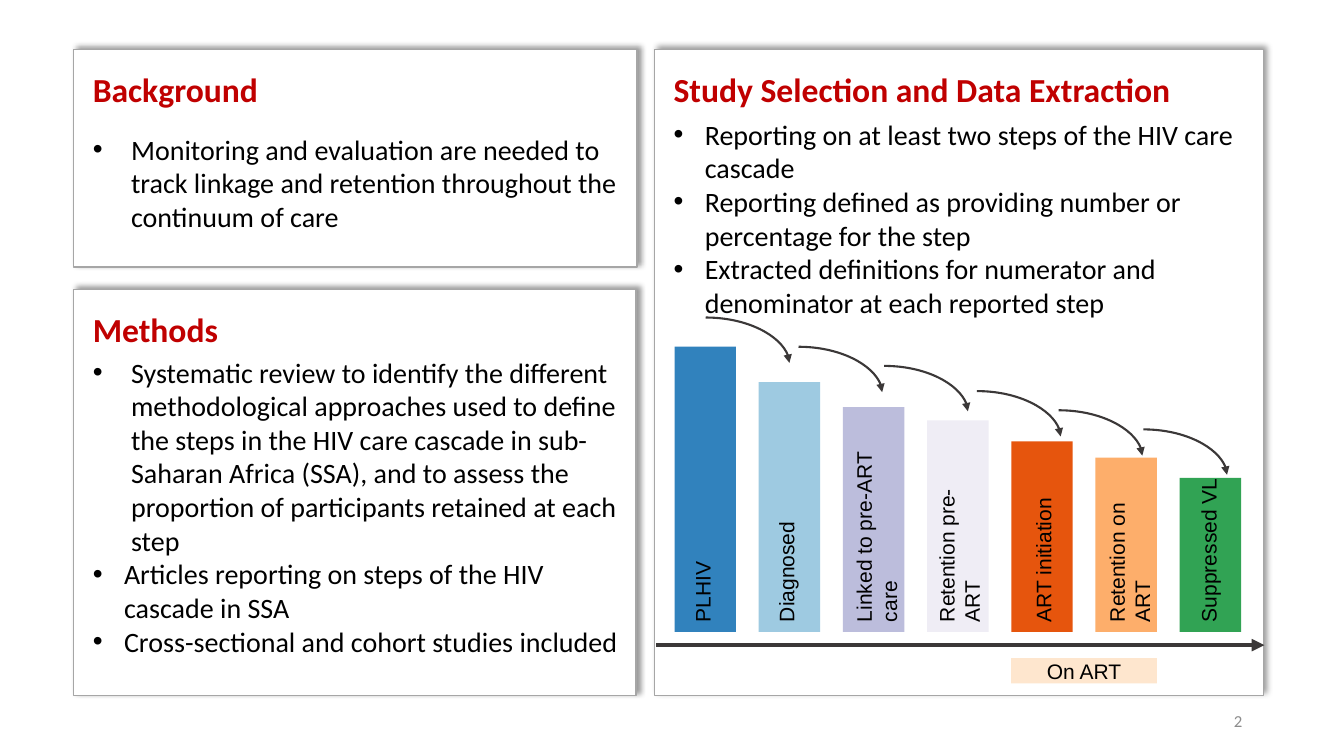
"""Build a slide on the background, methods and care cascade of an HIV review."""
from dataclasses import dataclass

from lxml.etree import SubElement
from pptx import Presentation
from pptx.dml.color import RGBColor
from pptx.enum.shapes import MSO_CONNECTOR as Connector, MSO_SHAPE as Shape
from pptx.enum.text import MSO_ANCHOR as Anchor, MSO_AUTO_SIZE as AutoSize, PP_ALIGN as Align
from pptx.oxml.ns import qn
from pptx.util import Inches, Pt


@dataclass
class Theme:
    heading: str = "C00000"
    text: str = "000000"
    muted: str = "8C8C8C"
    panel: str = "FFFFFF"
    border: str = "A6A6A6"
    arrow: str = "3B3838"
    on_art: str = "FEE6CE"
    body_font: str = "Calibri"
    chart_font: str = "Arial"
    heading_size: int = 24
    body_size: int = 20
    label_size: int = 15
    number_size: int = 12


theme = Theme()


def write(paragraph, text, size, color, font_name, bold=False, align=Align.LEFT):
    paragraph.alignment = align
    run = paragraph.add_run()
    run.text = text
    for name, value in {"size": Pt(size), "name": font_name, "bold": bold}.items():
        setattr(run.font, name, value)
    run.font.color.rgb = RGBColor.from_string(color)


def add_arrow(kind, left, top, right, bottom, width):
    arrow = slide.shapes.add_connector(
        kind, Inches(left), Inches(top), Inches(right), Inches(bottom))
    arrow.line.color.rgb = RGBColor.from_string(theme.arrow)
    arrow.line.width = Pt(width)
    SubElement(arrow.line._get_or_add_ln(), qn("a:tailEnd"), type="triangle")
    SubElement(arrow._element.spPr, qn("a:effectLst"))
    return arrow


presentation = Presentation()
presentation.slide_width = Inches(13.33)
presentation.slide_height = Inches(7.5)
slide = presentation.slides.add_slide(presentation.slide_layouts.get_by_name("Comparison"))
placeholders = {shape.placeholder_format.idx: shape for shape in slide.placeholders}

panels = [
    (1, (0.73, 0.49, 5.59, 2.16), "Background", 12, [
        (0.38, 4.5, "Monitoring and evaluation are needed to track linkage and "
                    "retention throughout the continuum of care")]),
    (2, (0.73, 2.87, 5.58, 4.03), "Methods", 0, [
        (0.38, 4.5, "Systematic review to identify the different methodological approaches "
                    "used to define the steps in the HIV care cascade in sub-Saharan Africa "
                    "(SSA), and to assess the proportion of participants retained at each step"),
        (0.31, 0, "Articles reporting on steps of the HIV cascade in SSA"),
        (0.31, 0, "Cross-sectional and cohort studies included")]),
    (4, (6.49, 0.49, 6.04, 6.41), "Study Selection and Data Extraction", 6, [
        (0.31, 0, "Reporting on at least two steps of the HIV care cascade"),
        (0.31, 0, "Reporting defined as providing number or percentage for the step"),
        (0.31, 0, "Extracted definitions for numerator and denominator at each reported step")]),
]
for index, box, heading, space_after, bullets in panels:
    panel = placeholders.pop(index)
    for name, value in zip(("left", "top", "width", "height"), box):
        setattr(panel, name, Inches(value))
    panel.fill.solid()
    panel.fill.fore_color.rgb = RGBColor.from_string(theme.panel)
    panel.line.color.rgb = RGBColor.from_string(theme.border)
    panel.line.width = Pt(1)
    effects = SubElement(panel._element.spPr, qn("a:effectLst"))
    shadow = SubElement(effects, qn("a:outerShdw"), blurRad=str(Pt(4)), dist=str(Pt(3)),
                        dir=str(315 * 60000), algn="bl", rotWithShape="0")
    shade = SubElement(shadow, qn("a:srgbClr"), val=theme.text)
    SubElement(shade, qn("a:alpha"), val="40000")

    frame = panel.text_frame
    frame_format = {"margin_left": Inches(0.19), "margin_top": Inches(0.19),
                    "margin_right": Inches(0.08 if index == 4 else 0.1),
                    "margin_bottom": Inches(0.05), "word_wrap": True,
                    "auto_size": AutoSize.NONE, "vertical_anchor": Anchor.TOP}
    for name, value in frame_format.items():
        setattr(frame, name, value)
    title = frame.paragraphs[0]
    write(title, heading, theme.heading_size, theme.heading, theme.body_font, bold=True)
    title.space_before, title.space_after = Pt(0), Pt(space_after)
    properties = title._p.get_or_add_pPr()
    properties.set("marL", "0")
    properties.set("indent", "0")
    SubElement(properties, qn("a:buNone"))
    for indent, space_before, text in bullets:
        paragraph = frame.add_paragraph()
        write(paragraph, text, theme.body_size, theme.text, theme.body_font)
        paragraph.space_before, paragraph.space_after = Pt(space_before), Pt(0)
        properties = paragraph._p.get_or_add_pPr()
        properties.set("marL", str(Inches(indent)))
        properties.set("indent", str(-Inches(indent)))
        SubElement(properties, qn("a:buFont"), typeface=theme.chart_font)
        SubElement(properties, qn("a:buChar"), char="•")

for unused in placeholders.values():
    unused._element.getparent().remove(unused._element)

add_arrow(Connector.STRAIGHT, 6.51, 6.4, 12.54, 6.4, 3)

first_bar, bar_step, bar_width, base = 6.69, 0.835, 0.61, 6.27
steps = [
    ("PLHIV", "3182BD", 3.44, 7.0, 1.47, 0.42),
    ("Diagnosed", "9ECAE1", 3.79, 7.83, 2, 0.42),
    ("Linked to pre-ART care", "BCBDDC", 4.04, 8.75, 2.29, 0.72),
    ("Retention pre-ART", "EFEDF5", 4.17, 9.57, 1.82, 0.72),
    ("ART initiation", "E6550D", 4.38, 10.36, 2.17, 0.38),
    ("Retention on ART", "FDAE6B", 4.54, 11.26, 1.83, 0.72),
    ("Suppressed VL", "31A354", 4.74, 12.17, 1.97, 0.72),
]
blocks = [(first_bar + i * bar_step, top, bar_width, base - top, color)
          for i, (_, color, top, *_) in enumerate(steps)]
blocks.append((first_bar + 4 * bar_step, 6.53, bar_step + bar_width, 0.25, theme.on_art))
for left, top, width, height, color in blocks:
    block = slide.shapes.add_shape(
        Shape.RECTANGLE, Inches(left), Inches(top), Inches(width), Inches(height))
    block.shadow.inherit = False
    block.fill.solid()
    block.fill.fore_color.rgb = RGBColor.from_string(color)
    block.line.fill.background()
block.text_frame.vertical_anchor = Anchor.MIDDLE
write(block.text_frame.paragraphs[0], "On ART", theme.label_size, theme.text,
      theme.chart_font, align=Align.CENTER)

for text, _, _, center, length, thickness in steps:
    label = slide.shapes.add_textbox(
        Inches(center - length / 2), Inches(base - length / 2 - thickness / 2),
        Inches(length), Inches(thickness))
    label.rotation = 270
    label.text_frame.word_wrap = True
    write(label.text_frame.paragraphs[0], text, theme.label_size, theme.text, theme.chart_font)

arrow_starts = [(7, 3.15), (7.92, 3.44), (8.77, 3.63), (9.69, 3.88), (10.5, 4.07), (11.34, 4.26)]
for left, top in arrow_starts:
    curve = add_arrow(Connector.CURVE, left, top, left + 0.83, top + 0.45, 1.5)
    curve._element.spPr.find(qn("a:prstGeom")).set("prst", "curvedConnector2")

number = slide.shapes.add_textbox(Inches(9.42), Inches(6.95), Inches(3), Inches(0.4))
number.text_frame.word_wrap = True
number.text_frame.vertical_anchor = Anchor.MIDDLE
write(number.text_frame.paragraphs[0], "2", theme.number_size, theme.muted,
      theme.body_font, align=Align.RIGHT)

presentation.save("out.pptx")
